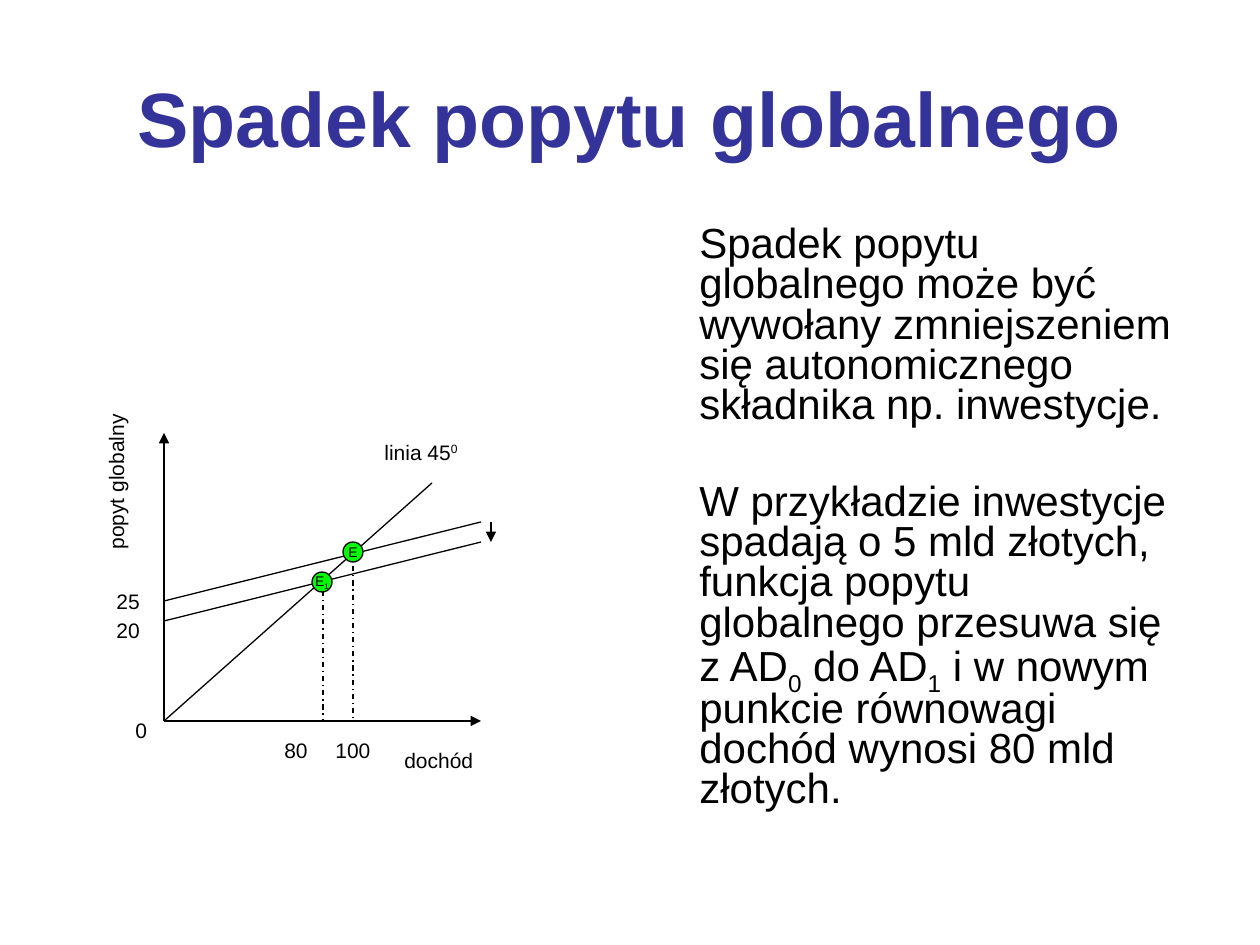
from pptx import Presentation
from pptx.dml.color import RGBColor
from pptx.enum.dml import MSO_LINE as Dash
from pptx.enum.shapes import MSO_CONNECTOR as Conn, MSO_SHAPE as Shape
from pptx.enum.text import MSO_ANCHOR as Anchor, PP_ALIGN as Align
from pptx.oxml.ns import qn
from pptx.util import Pt
from lxml.etree import SubElement

PX = 914400 / 126  # EMU in one px


def px(*nums):
    return [round(n * PX) for n in nums]


def write(para, text, size=12, color="000000", bold=False, base=0):
    run = para.add_run()
    run.text = text
    font = run.font
    font.name, font.size, font.bold = "Arial", Pt(size), bold
    font.color.rgb = RGBColor.from_string(color)
    if base:
        font._element.set("baseline", str(base * 1000))


deck = Presentation()
deck.slide_width, deck.slide_height = px(1260, 945)
slide = deck.slides.add_slide(deck.slide_layouts[5])
shapes = slide.shapes

# Title
title = shapes.title
title.left, title.top, title.width, title.height = px(63, 38, 1134, 158)
frame = title.text_frame
frame.vertical_anchor = Anchor.MIDDLE
frame.paragraphs[0].alignment = Align.CENTER
write(frame.paragraphs[0], "Spadek popytu globalnego", size=44, color="333399", bold=True)

# Explanation: each part is a text and its baseline shift
story = [
    [("Spadek popytu globalnego może być wywołany zmniejszeniem się "
      "autonomicznego składnika np. inwestycje.", 0)],
    [("W przykładzie inwestycje spadają o 5 mld złotych, funkcja popytu "
      "globalnego przesuwa się z AD", 0), ("0", -25), (" do AD", 0), ("1", -25),
     (" i w nowym punkcie równowagi dochód wynosi 80 mld złotych.", 0)],
]
frame = shapes.add_textbox(*px(640, 220, 557, 624)).text_frame
frame.word_wrap = True
for i, parts in enumerate(story):
    para = frame.add_paragraph() if i else frame.paragraphs[0]
    para._p.get_or_add_pPr().set("marL", str(px(47)[0]))
    para.line_spacing = 0.8
    if i:
        para.space_before = Pt(32)
    for text, base in parts:
        write(para, text, size=24, base=base)

# Axes, demand lines, drop lines and shift arrow: ends, arrowhead, dash
lines = [
    ((164, 721, 164, 433), True, False),
    ((164, 721, 481, 721), True, False),
    ((164, 721, 432, 483), False, False),
    ((164, 601, 481, 522), False, False),
    ((164, 621, 481, 542), False, False),
    ((353, 552, 353, 721), False, True),
    ((323, 591, 323, 721), False, True),
    ((491, 522, 491, 542), True, False),
]
for ends, arrow, dashed in lines:
    line = shapes.add_connector(Conn.STRAIGHT, *px(*ends))
    line.line.width = Pt(0.75)
    line.line.color.rgb = RGBColor.from_string("000000")
    if dashed:
        line.line.dash_style = Dash.DASH_DOT
    if arrow:
        SubElement(line.line._get_or_add_ln(), qn("a:tailEnd"), type="triangle")
    SubElement(line._element.spPr, qn("a:effectLst"))

# Labels: text, raised part, box, turn
labels = [
    ("dochód", "", (392, 741, 129, 38), 0),
    ("popyt globalny", "", (17, 444, 198, 38), 270),
    ("0", "", (123, 711, 49, 38), 0),
    ("linia 45", "0", (372, 433, 118, 38), 0),
    ("100", "", (323, 731, 79, 38), 0),
    ("80", "", (272, 731, 49, 38), 0),
    ("25", "", (104, 582, 49, 38), 0),
    ("20", "", (104, 611, 69, 38), 0),
]
for text, power, place, turn in labels:
    box = shapes.add_textbox(*px(*place))
    box.rotation = turn
    box.text_frame.word_wrap = True
    para = box.text_frame.paragraphs[0]
    write(para, text)
    if power:
        write(para, power, base=30)

# Balance points
for x, y, sub in [(343, 542, ""), (312, 572, "1")]:
    dot = shapes.add_shape(Shape.OVAL, *px(x, y, 20, 20))
    dot.shadow.inherit = False
    dot.fill.solid()
    dot.fill.fore_color.rgb = RGBColor.from_string("00FF00")
    dot.line.color.rgb = RGBColor.from_string("000000")
    dot.line.width = Pt(0.75)
    frame = dot.text_frame
    frame.word_wrap = False
    frame.vertical_anchor = Anchor.MIDDLE
    para = frame.paragraphs[0]
    para.alignment = Align.CENTER
    write(para, "E", size=8)
    if sub:
        write(para, sub, size=8, base=-25)

deck.save("out.pptx")
